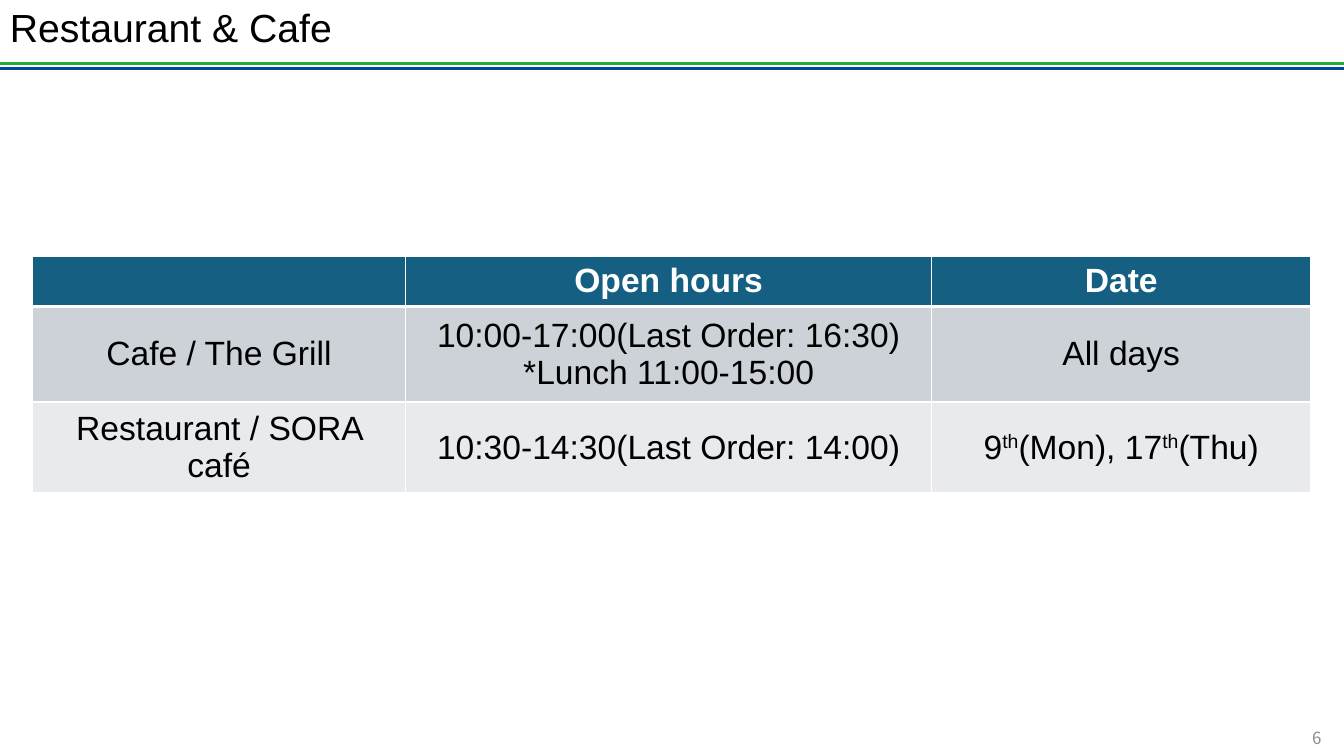
from lxml.etree import SubElement
from pptx import Presentation
from pptx.dml.color import RGBColor
from pptx.enum.shapes import MSO_CONNECTOR
from pptx.enum.text import MSO_ANCHOR, PP_ALIGN
from pptx.oxml.ns import qn
from pptx.util import Cm, Pt

COLORS = {
    "green": "21AB38", "blue": "00469C", "header": "156082",
    "band_dark": "CCD2D8", "band_light": "E8EAED",
    "white": "FFFFFF", "black": "000000", "gray": "8C8C8C",
}
TITLE = "Restaurant & Cafe"
PAGE_NUMBER = "6"
ROWS = [
    ["", "Open hours", "Date"],
    ["Cafe / The Grill", "10:00-17:00(Last Order: 16:30) *Lunch 11:00-15:00", "All days"],
    ["Restaurant / SORA café", "10:30-14:30(Last Order: 14:00)",
     ["9", ("th", 30000), "(Mon), 17", ("th", 30000), "(Thu)"]],
]
ROW_FILLS = ["header", "band_dark", "band_light"]
COLUMN_WIDTHS = [9.4, 13.26, 9.55]
ROW_HEIGHTS = [1.19, 2.41, 2.16]
RULES = [("green", 1.6), ("blue", 1.73)]
SLIDE_WIDTH, SLIDE_HEIGHT = 33.87, 19.05


def rgb(name):
    return RGBColor.from_string(COLORS[name])


def write(frame, content, color, size, font="Arial", bold=False,
          align=PP_ALIGN.CENTER, line_spacing=1.0):
    para = frame.paragraphs[0]
    para.alignment = align
    para.line_spacing = line_spacing
    values = {"name": font, "size": Pt(size), "bold": bold}
    for part in [content] if isinstance(content, str) else content:
        text, baseline = (part, 0) if isinstance(part, str) else part
        span = para.add_run()
        span.text = text
        for key, value in values.items():
            setattr(span.font, key, value)
        span.font.color.rgb = rgb(color)
        if baseline:
            span.font._element.set("baseline", str(baseline))


def add_text(page, place, content, **style):
    box = page.shapes.add_textbox(*[Cm(length) for length in place])
    box.text_frame.word_wrap = True
    box.text_frame.vertical_anchor = MSO_ANCHOR.MIDDLE
    write(box.text_frame, content, **style)


def add_rule(page, color, top):
    rule = page.shapes.add_connector(
        MSO_CONNECTOR.STRAIGHT, Cm(0), Cm(top), Cm(SLIDE_WIDTH), Cm(top))
    rule.line.color.rgb = rgb(color)
    rule.line.width = Pt(2.25)
    SubElement(rule._element.spPr, qn("a:effectLst"))


def set_borders(cell, widths):
    properties = cell._tc.get_or_add_tcPr()
    for side, width in widths.items():
        border = SubElement(properties, qn(f"a:ln{side}"), w=str(Pt(width)))
        fill = SubElement(border, qn("a:solidFill"))
        SubElement(fill, qn("a:srgbClr"), val=COLORS["white"])


def add_hours_table(page):
    table = page.shapes.add_table(
        len(ROWS), len(COLUMN_WIDTHS), Cm(0.82), Cm(6.45),
        Cm(sum(COLUMN_WIDTHS)), Cm(sum(ROW_HEIGHTS))).table
    for column, width in zip(table.columns, COLUMN_WIDTHS):
        column.width = Cm(width)
    for index, (row, contents) in enumerate(zip(table.rows, ROWS)):
        row.height = Cm(ROW_HEIGHTS[index])
        header = index == 0
        for cell, content in zip(row.cells, contents):
            set_borders(cell, {"L": 1, "R": 1, "T": 3 if index == 1 else 1,
                               "B": 3 if header else 1})
            cell.fill.solid()
            cell.fill.fore_color.rgb = rgb(ROW_FILLS[index])
            cell.vertical_anchor = MSO_ANCHOR.MIDDLE
            write(cell.text_frame, content, "white" if header else "black", 24, bold=header)


def main():
    deck = Presentation()
    deck.slide_width, deck.slide_height = Cm(SLIDE_WIDTH), Cm(SLIDE_HEIGHT)
    page = deck.slides.add_slide(deck.slide_layouts[6])
    for color, top in RULES:
        add_rule(page, color, top)
    add_text(page, (31.98, 18.36, 1.57, 0.46), PAGE_NUMBER, color="gray", size=12,
             font="Noto Sans CJK JP", align=PP_ALIGN.RIGHT)
    add_text(page, (0, 0, 27.91, 1.5), TITLE, color="black", size=28,
             align=PP_ALIGN.LEFT, line_spacing=0.9)
    add_hours_table(page)
    deck.save("out.pptx")


if __name__ == "__main__":
    main()
